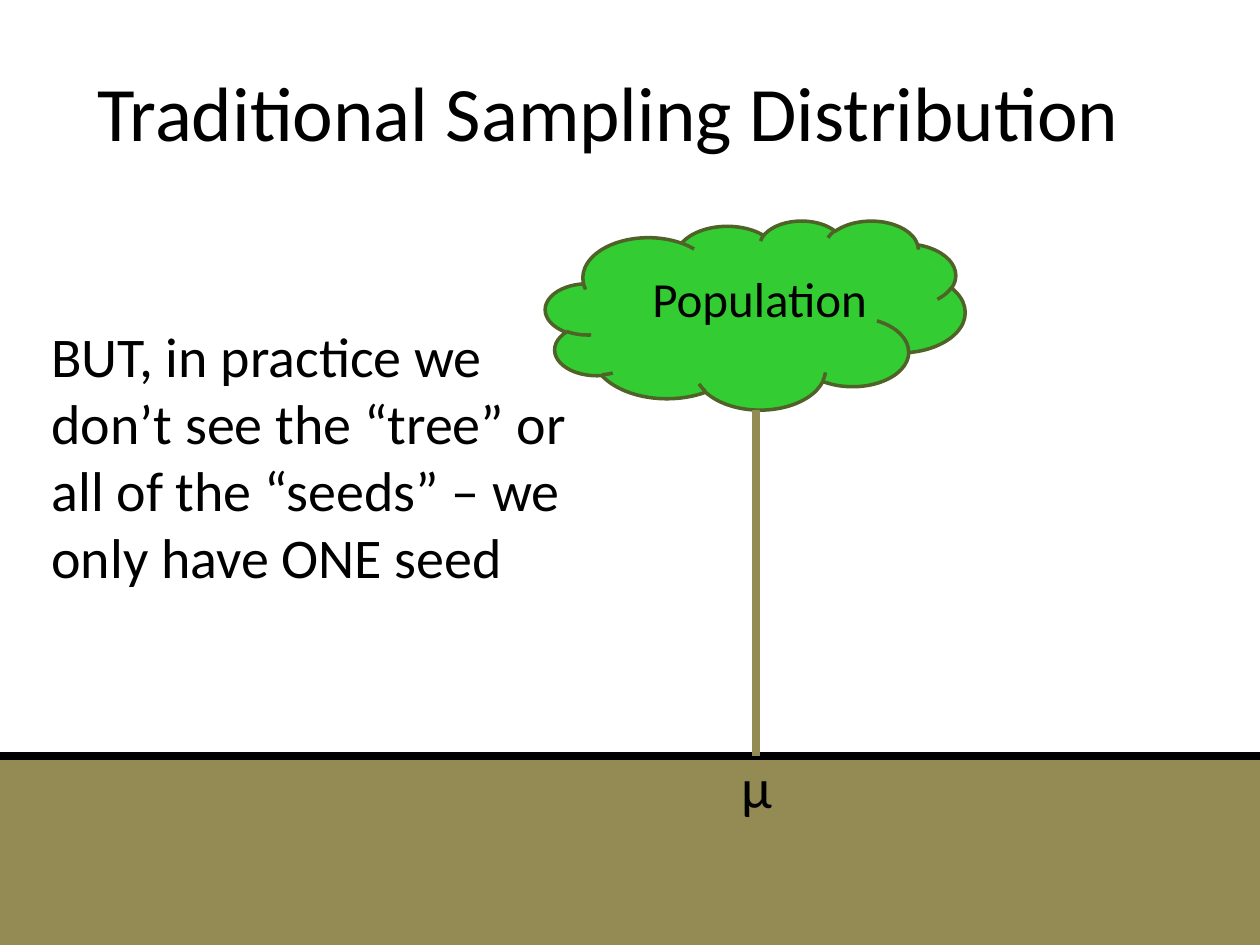
from lxml.etree import SubElement
from pptx import Presentation
from pptx.dml.color import RGBColor
from pptx.enum.shapes import MSO_CONNECTOR, MSO_SHAPE
from pptx.enum.text import MSO_ANCHOR, PP_ALIGN
from pptx.oxml.ns import qn
from pptx.util import Inches, Pt

COLORS = {
    "ink": "000000",
    "soil": "948A54",
    "leaves": "33CC33",
    "leaf_edge": "4F6228",
}
FONT = "Calibri"
# Grid of one-inch columns and rows
WIDTH, HEIGHT = 10, 7.5
GROUND = 6
TRUNK = 6
CROWN_BOTTOM = 3.25


class SlideBuilder:
    """Holds the style and the current slide; lengths are grid columns and rows."""

    def __init__(self, deck):
        self.slide = deck.slides.add_slide(deck.slide_layouts[5])

    @staticmethod
    def color(name):
        return RGBColor.from_string(COLORS[name])

    def set_words(self, frame, words, size):
        frame.text = words
        frame.word_wrap = True
        for run in frame.paragraphs[0].runs:
            run.font.name = FONT
            run.font.size = Pt(size)
            run.font.color.rgb = self.color("ink")

    def title(self, words, left, top, width, height):
        heading = self.slide.shapes.title
        heading.left, heading.top = Inches(left), Inches(top)
        heading.width, heading.height = Inches(width), Inches(height)
        self.set_words(heading.text_frame, words, 44)
        heading.text_frame.vertical_anchor = MSO_ANCHOR.MIDDLE
        heading.text_frame.paragraphs[0].alignment = PP_ALIGN.CENTER

    def text(self, words, left, top, width, height, size):
        box = self.slide.shapes.add_textbox(
            Inches(left), Inches(top), Inches(width), Inches(height))
        self.set_words(box.text_frame, words, size)

    def shape(self, preset, left, top, width, height, fill, edge=None):
        area = self.slide.shapes.add_shape(
            preset, Inches(left), Inches(top), Inches(width), Inches(height))
        area.shadow.inherit = False
        area.fill.solid()
        area.fill.fore_color.rgb = self.color(fill)
        if edge:
            area.line.color.rgb = self.color(edge)
            area.line.width = Pt(2)
        else:
            area.line.fill.background()

    def line(self, start, end, color):
        stroke = self.slide.shapes.add_connector(
            MSO_CONNECTOR.STRAIGHT, *map(Inches, start + end))
        stroke.line.color.rgb = self.color(color)
        stroke.line.width = Pt(4.5)
        SubElement(stroke._element.spPr, qn("a:effectLst"))


def main():
    deck = Presentation()
    deck.slide_width, deck.slide_height = Inches(WIDTH), Inches(HEIGHT)
    builder = SlideBuilder(deck)

    builder.title("Traditional Sampling Distribution", 0.33, 0.25, 9, 1.25)

    # Ground
    builder.shape(MSO_SHAPE.RECTANGLE, 0, GROUND, WIDTH, HEIGHT - GROUND, "soil")
    builder.line((0, GROUND), (WIDTH, GROUND), "ink")

    # Population tree
    builder.shape(MSO_SHAPE.CLOUD, 4.33, CROWN_BOTTOM - 1.5, 3.33, 1.5,
                  "leaves", "leaf_edge")
    builder.text("Population", 5.08, 2.08, 2, 0.57, 28)
    builder.line((TRUNK, CROWN_BOTTOM), (TRUNK, GROUND), "soil")
    builder.text("µ", 5.79, 5.92, 0.58, 0.64, 32)

    # Remark beside the tree
    builder.text("BUT, in practice we don’t see the “tree” or all of the "
                 "“seeds” – we only have ONE seed", 0.31, 2.5, 4.42, 2.26, 32)

    deck.save("out.pptx")


if __name__ == "__main__":
    main()
